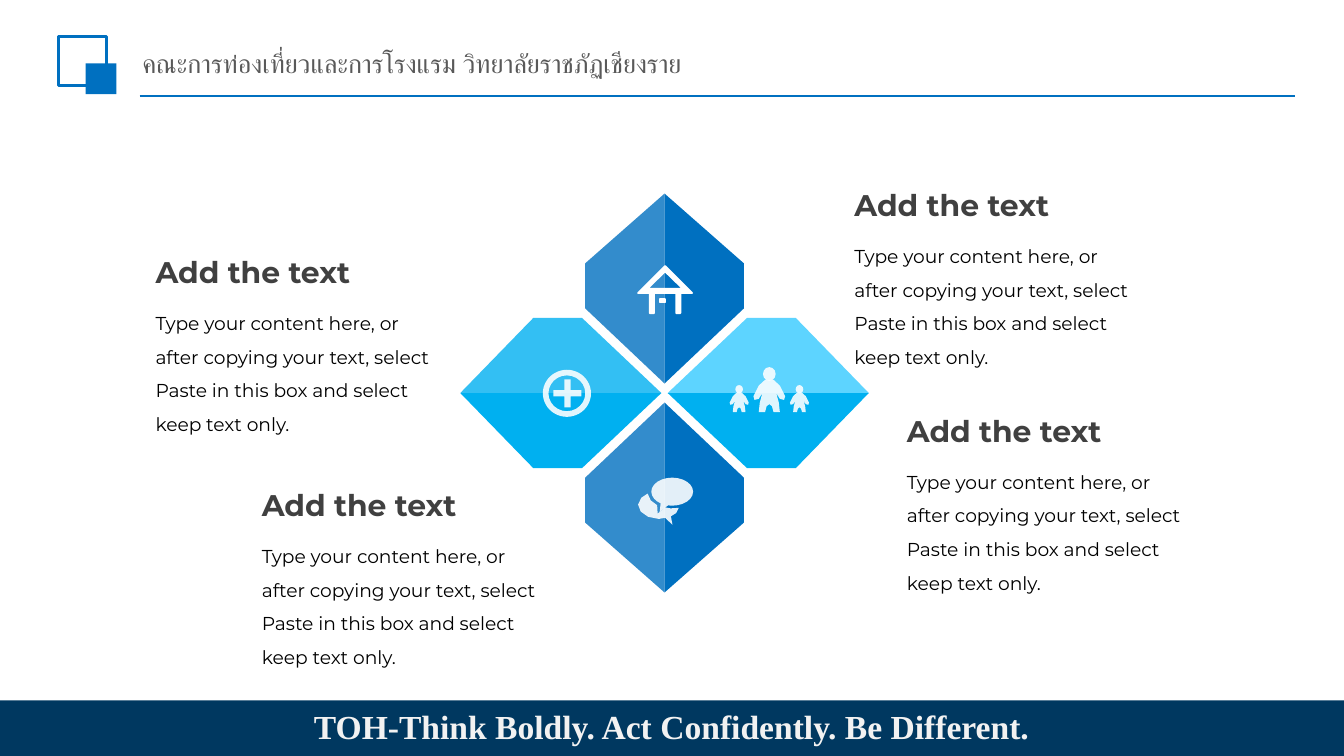
from lxml.etree import SubElement
from pptx import Presentation
from pptx.dml.color import RGBColor
from pptx.enum.shapes import MSO_CONNECTOR, MSO_SHAPE as Preset
from pptx.enum.text import MSO_ANCHOR, MSO_AUTO_SIZE, PP_ALIGN
from pptx.oxml.ns import qn
from pptx.util import Cm, Pt

COLORS = {
    "blue": "0070C0", "cyan": "00B0F0", "light_cyan": "5DD4FF", "navy": "003860",
    "white": "FFFFFF", "off_white": "F2F2F2", "heading": "404040",
    "title": "595959", "body": "000000",
}


def write_text(shape, text, size, color, font="Montserrat", bold=False,
               align=PP_ALIGN.LEFT, spacing=1.0, anchor=MSO_ANCHOR.TOP):
    frame = shape.text_frame
    frame.word_wrap = True
    frame.auto_size = MSO_AUTO_SIZE.NONE
    frame.vertical_anchor = anchor
    paragraph = frame.paragraphs[0]
    paragraph.alignment = align
    paragraph.line_spacing = spacing
    run = paragraph.add_run()
    run.text = text
    run.font.size = Pt(size)
    run.font.name = font
    run.font.bold = bold
    run.font.color.rgb = RGBColor.from_string(COLORS[color])


def add_figure(outline, color, opacity=100):
    """Draw a preset in a (left, top, width, height) box, or a list of contours, in cm."""
    if isinstance(outline, list):
        contours = [[(Cm(x), Cm(y)) for x, y in points] for points in outline]
        builder = slide.shapes.build_freeform(*contours[0][0])
        builder.add_line_segments(contours[0][1:])
        for points in contours[1:]:
            builder.move_to(*points[0])
            builder.add_line_segments(points[1:])
        shape = builder.convert_to_shape()
    else:
        preset, *box = outline
        shape = slide.shapes.add_shape(preset, *map(Cm, box))
    shape.shadow.inherit = False
    shape.line.fill.background()
    shape.fill.solid()
    shape.fill.fore_color.rgb = RGBColor.from_string(COLORS[color])
    if opacity < 100:
        color_element = shape._element.spPr.find(qn("a:solidFill"))[0]
        SubElement(color_element, qn("a:alpha"), val=str(opacity * 1000))
    return shape


presentation = Presentation()
presentation.slide_width = Cm(25.4)
presentation.slide_height = Cm(14.29)
slide = presentation.slides.add_slide(presentation.slide_layouts[5])

# Header: rule, square emblem and title
rule = slide.shapes.add_connector(MSO_CONNECTOR.STRAIGHT, Cm(2.64), Cm(1.82), Cm(24.48), Cm(1.82))
rule.line.color.rgb = RGBColor.from_string(COLORS["blue"])
rule.line.width = Pt(1.25)
SubElement(rule._element.spPr, qn("a:effectLst"))

frame_square = add_figure((Preset.RECTANGLE, 1.1, 0.69, 0.91, 0.93), "blue")
frame_square.fill.background()
frame_square.line.color.rgb = RGBColor.from_string(COLORS["blue"])
frame_square.line.width = Pt(1.5)
add_figure((Preset.RECTANGLE, 1.62, 1.2, 0.58, 0.58), "blue")

title = slide.shapes.title
title.left, title.top, title.width, title.height = Cm(2.51), Cm(0.74), Cm(16.38), Cm(0.91)
title.text_frame.margin_left = title.text_frame.margin_right = Cm(0.18)
title.text_frame.margin_top = title.text_frame.margin_bottom = Cm(0.1)
write_text(title, "คณะการท่องเที่ยวและการโรงแรม วิทยาลัยราชภัฏเชียงราย", 14, "title",
           font="Arial", anchor=MSO_ANCHOR.MIDDLE)

# Footer band with motto
add_figure((Preset.RECTANGLE, 0, 13.24, 25.4, 1.05), "navy")
motto = slide.shapes.add_textbox(Cm(3.4), Cm(13.11), Cm(18.59), Cm(1.32))
write_text(motto, "TOH-Think Boldly. Act Confidently. Be Different.", 18, "off_white",
           font="Times New Roman", bold=True, align=PP_ALIGN.CENTER, spacing=0.9,
           anchor=MSO_ANCHOR.MIDDLE)

# Four petals around one centre, each made of two halves
CENTER_X, CENTER_Y = 12.56, 7.43
for direction in (-1, 1):
    for side in (-1, 1):
        across = [(0.06, 0), (1.56, 1.42), (2.48, 1.42), (3.86, 0)]
        upright = [(0.18, 0), (1.6, 1.5), (2.45, 1.5), (3.77, 0)]
        if side == 1:
            color, opacity = "cyan", 100
        else:
            color, opacity = ("cyan", 80) if direction == -1 else ("light_cyan", 100)
        add_figure([[(CENTER_X + direction * reach, CENTER_Y + side * half)
                     for reach, half in across]], color, opacity)
        add_figure([[(CENTER_X + side * half, CENTER_Y + direction * reach)
                     for reach, half in upright]], "blue", 100 if side == 1 else 80)

# Plus icon
ring = add_figure((Preset.DONUT, 10.26, 6.99, 0.91, 0.89), "white", 88)
ring.adjustments[0] = 0.12
plus = add_figure((Preset.CROSS, 10.46, 7.17, 0.53, 0.53), "white", 88)
plus.adjustments[0] = 0.39

# Speech icon
add_figure([[(12.24, 9.33), (12.12, 9.41), (12.06, 9.54), (12.11, 9.67), (12.25, 9.77),
             (12.45, 9.81), (12.57, 9.79), (12.71, 9.92), (12.68, 9.76), (12.78, 9.7),
             (12.83, 9.6), (12.67, 9.61), (12.57, 9.59), (12.43, 9.71), (12.42, 9.55),
             (12.3, 9.46)]], "white", 89)
bubble = add_figure((Preset.OVAL_CALLOUT, 12.31, 9.03, 0.79, 0.53), "white", 89)
bubble.adjustments[0] = -0.3
bubble.adjustments[1] = 0.72

# Family icon: one figure at two sizes
half_body = [(0.08, -0.61), (0.2, -0.5), (0.3, -0.3), (0.28, -0.23), (0.2, -0.25),
             (0.13, -0.36), (0.18, -0.18), (0.2, 0), (0.08, 0), (0.05, -0.11), (0, -0.15)]
body = half_body + [(-x, y) for x, y in reversed(half_body[:-1])]
for person_x, scale in ((13.97, 0.6), (14.54, 1), (15.11, 0.6)):
    add_figure([[(person_x + x * scale, 7.79 + y * scale) for x, y in body]], "white", 88)
    add_figure((Preset.OVAL, person_x - 0.12 * scale, 7.79 - 0.85 * scale,
                0.24 * scale, 0.26 * scale), "white", 88)

# House icon
half_house = [(0, 5.03), (0.51, 5.54), (0.29, 5.54), (0.29, 5.92), (0.21, 5.92), (0.21, 5.54)]
HOUSE_X = 12.57
house_outline = half_house + [(-x, y) for x, y in reversed(half_house[1:])]
gable = [(0, 5.13), (0.34, 5.46), (-0.34, 5.46)]
window = [(-0.09, 5.66), (0, 5.66), (0, 5.72), (-0.09, 5.72)]
house = add_figure([[(HOUSE_X + x, y) for x, y in points + points[:1]]
                    for points in (house_outline, gable, window)], "white")
house.line.color.rgb = RGBColor.from_string(COLORS["white"])
house.line.width = Pt(1)

# Captions
for left, top in ((2.69, 4.67), (4.7, 9.07), (16.89, 7.67), (15.9, 3.4)):
    content = slide.shapes.add_textbox(Cm(left), Cm(top + 0.89), Cm(5.99), Cm(2.18))
    write_text(content, "Type your content here, or after copying your text, "
               "select Paste in this box and select keep text only.", 10, "body", spacing=1.5)
    heading = slide.shapes.add_textbox(Cm(left), Cm(top), Cm(4.47), Cm(0.94))
    write_text(heading, "Add the text", 16, "heading", bold=True)

presentation.save("out.pptx")
